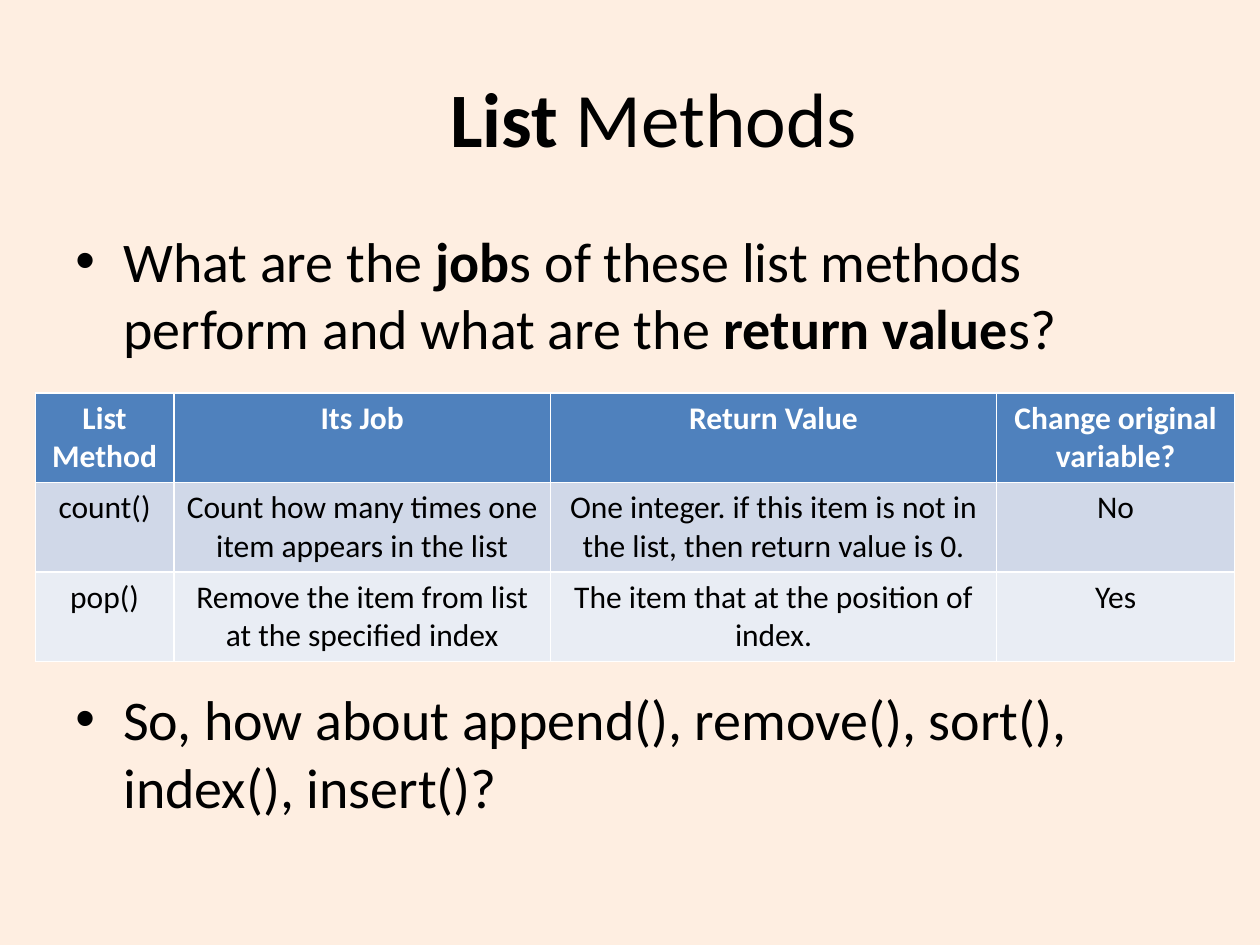
from pptx import Presentation
from pptx.dml.color import RGBColor
from pptx.enum.text import MSO_ANCHOR, PP_ALIGN
from pptx.oxml.ns import qn
from pptx.util import Inches, Pt
from lxml import etree

CENTER = PP_ALIGN.CENTER
MIDDLE = MSO_ANCHOR.MIDDLE
FONT = "Calibri"
BLACK = "000000"
WHITE = "FFFFFF"
FILLS = ["4F81BD", "D0D8E8", "E9EDF4"]
WIDTHS = [1.1, 2.99, 3.54, 1.89]
ROWS = [
    ["List Method", "Its Job", "Return Value", "Change original variable?"],
    ["count()", "Count how many times one item appears in the list",
     "One integer. if this item is not in the list, then return value is 0.",
     "No"],
    ["pop()", "Remove the item from list at the specified index",
     "The item that at the position of index.", "Yes"],
]
ASK = [("What are the ", False), ("job", True),
       ("s of these list methods perform and what are the ", False),
       ("return value", True), ("s?", False)]
NEXT = [("So, how about append(), remove(), sort(), index(), insert()?", False)]


def color(code):
    """Return the colour for a hex string."""
    return RGBColor.from_string(code)


def style(run, size, bold=False, code=BLACK):
    """Set the font of a run."""
    font = run.font
    font.name, font.size, font.bold = FONT, Pt(size), bold
    font.color.rgb = color(code)


def fill_runs(para, parts, size):
    """Add plain and bold runs to a paragraph."""
    for text, bold in parts:
        run = para.add_run()
        run.text = text
        style(run, size, bold)


def place(shape, left, top, width, height):
    """Move and size a shape in inches."""
    shape.left, shape.top = Inches(left), Inches(top)
    shape.width, shape.height = Inches(width), Inches(height)


def add_title(slide):
    """Fill the title placeholder."""
    title = slide.shapes.title
    place(title, 0.5, 0.3, 9.38, 1.25)
    title.text_frame.vertical_anchor = MIDDLE
    para = title.text_frame.paragraphs[0]
    para.alignment = CENTER
    fill_runs(para, [("List", True), (" Methods", False)], 44)


def set_bullet(para):
    """Give a paragraph a bullet with a hanging indent."""
    props = para._p.get_or_add_pPr()
    props.set("marL", str(Inches(0.38)))
    props.set("indent", str(-Inches(0.38)))
    etree.SubElement(props, qn("a:buFont"), typeface="Arial")
    etree.SubElement(props, qn("a:buChar"), char="•")


def add_body(slide):
    """Add the two bullets, leaving room for the table between them."""
    box = slide.shapes.add_textbox(
        Inches(0.5), Inches(1.75), Inches(9), Inches(5.23))
    frame = box.text_frame
    frame.word_wrap = True
    first, last = frame.paragraphs[0], frame.add_paragraph()
    first.space_before, last.space_before = Pt(6.4), Pt(185)
    for para, parts in ((first, ASK), (last, NEXT)):
        set_bullet(para)
        fill_runs(para, parts, 32)


def add_grid(slide):
    """Add the table of list methods."""
    table = slide.shapes.add_table(
        len(ROWS), len(WIDTHS), Inches(0.28), Inches(3.12),
        Inches(sum(WIDTHS)), Inches(2.13)).table
    for col, width in zip(table.columns, WIDTHS):
        col.width = Inches(width)
    for i, row in enumerate(ROWS):
        for j, text in enumerate(row):
            cell = table.cell(i, j)
            cell.fill.solid()
            cell.fill.fore_color.rgb = color(FILLS[i])
            para = cell.text_frame.paragraphs[0]
            para.text = text
            para.alignment = CENTER
            style(para.runs[0], 18, i == 0, BLACK if i else WHITE)


def main():
    """Build and save the slide."""
    deck = Presentation()
    deck.slide_width, deck.slide_height = Inches(10), Inches(7.5)
    slide = deck.slides.add_slide(deck.slide_layouts[5])
    back = slide.background.fill
    back.solid()
    back.fore_color.rgb = color("FEEEE1")
    add_title(slide)
    add_body(slide)
    add_grid(slide)
    deck.save("out.pptx")


if __name__ == "__main__":
    main()
